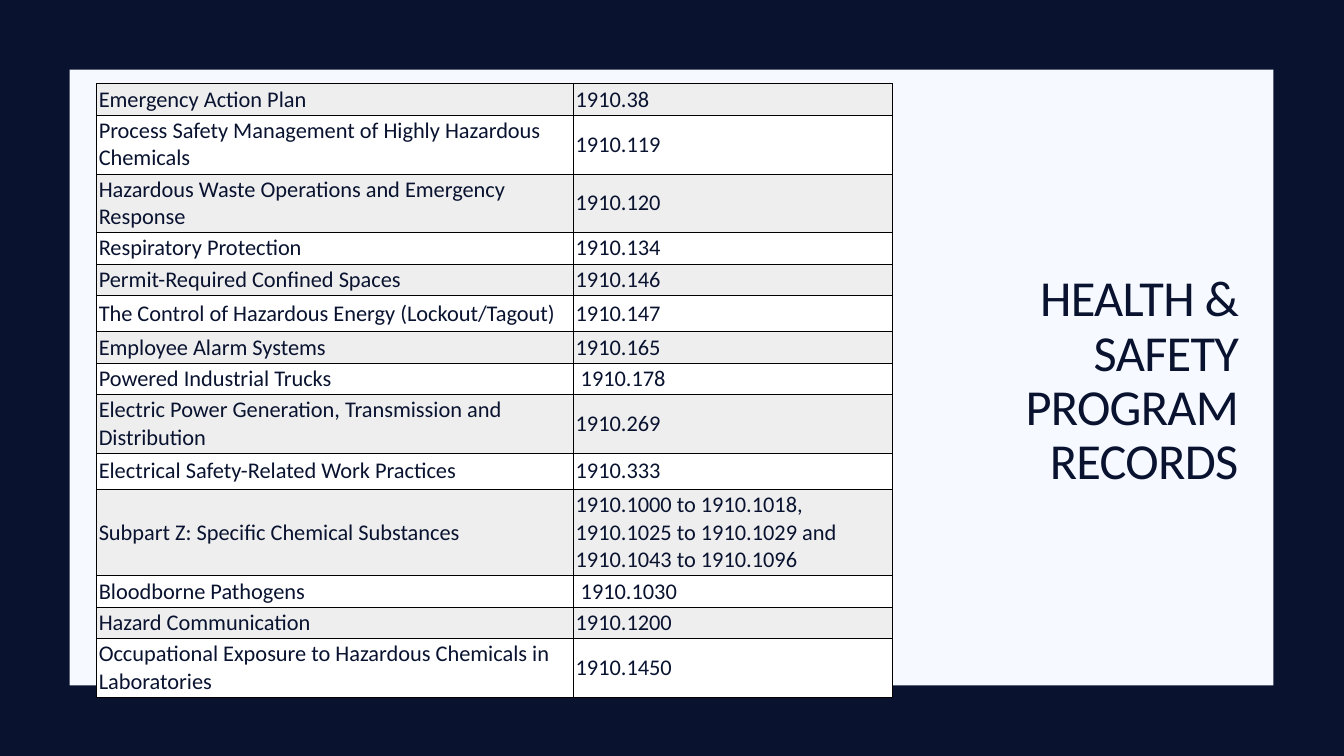
from dataclasses import dataclass

from lxml.etree import SubElement
from pptx import Presentation
from pptx.dml.color import RGBColor
from pptx.enum.shapes import MSO_SHAPE
from pptx.enum.text import MSO_ANCHOR, PP_ALIGN
from pptx.oxml.ns import qn
from pptx.util import Inches, Pt


@dataclass(frozen=True)
class Theme:
    font: str = "Calibri"
    navy: str = "091330"
    panel: str = "F6F9FF"
    bands: tuple = ("EEEEEE", "FFFFFF")
    border: str = "000000"
    border_pt: float = 0.5
    title_pt: int = 36
    table_pt: int = 16


THEME = Theme()

# Row heights by number of text lines, plus a roomier single line
ONE, ROOMY, TWO, THREE = 0.3, 0.36, 0.58, 0.85
COLUMN_WIDTHS = (4.73, 3.16)
RECORDS = [
    ("Emergency Action Plan", "1910.38", ONE),
    ("Process Safety Management of Highly Hazardous Chemicals", "1910.119", TWO),
    ("Hazardous Waste Operations and Emergency Response", "1910.120", TWO),
    ("Respiratory Protection", "1910.134", ONE),
    ("Permit-Required Confined Spaces", "1910.146", ONE),
    ("The Control of Hazardous Energy (Lockout/Tagout)", "1910.147", ROOMY),
    ("Employee Alarm Systems", "1910.165", ONE),
    ("Powered Industrial Trucks", " 1910.178", ONE),
    ("Electric Power Generation, Transmission and Distribution", "1910.269", TWO),
    ("Electrical Safety-Related Work Practices", "1910.333", ROOMY),
    ("Subpart Z: Specific Chemical Substances",
     "1910.1000 to 1910.1018, 1910.1025 to 1910.1029 and 1910.1043 to 1910.1096", THREE),
    ("Bloodborne Pathogens", " 1910.1030", ONE),
    ("Hazard Communication", "1910.1200", ONE),
    ("Occupational Exposure to Hazardous Chemicals in Laboratories", "1910.1450", TWO),
]


def add_run(p, text, size):
    r = p.add_run()
    r.text = text
    r.font.name = THEME.font
    r.font.size = Pt(size)
    r.font.color.rgb = RGBColor.from_string(THEME.navy)
    return r


def add_block(s, left, top, width, height, color):
    sp = s.shapes.add_shape(MSO_SHAPE.RECTANGLE, Inches(left), Inches(top),
                            Inches(width), Inches(height))
    sp.shadow.inherit = False
    sp.fill.solid()
    sp.fill.fore_color.rgb = RGBColor.from_string(color)
    sp.line.fill.background()


def set_borders(cell):
    # Borders must come before the fill in the cell properties
    tc_pr = cell._tc.get_or_add_tcPr()
    for side in ("a:lnL", "a:lnR", "a:lnT", "a:lnB"):
        ln = SubElement(tc_pr, qn(side), w=str(Pt(THEME.border_pt)))
        fill = SubElement(ln, qn("a:solidFill"))
        SubElement(fill, qn("a:srgbClr"), val=THEME.border)


def fill_cell(cell, text, band):
    set_borders(cell)
    cell.fill.solid()
    cell.fill.fore_color.rgb = RGBColor.from_string(band)
    cell.vertical_anchor = MSO_ANCHOR.MIDDLE
    cell.margin_left = cell.margin_right = Inches(0.02)
    cell.margin_top = cell.margin_bottom = Inches(0.02)
    add_run(cell.text_frame.paragraphs[0], text, THEME.table_pt)


def add_records_table(s, left, top):
    height = sum(row_height for *_, row_height in RECORDS)
    frame = s.shapes.add_table(len(RECORDS), len(COLUMN_WIDTHS), Inches(left), Inches(top),
                               Inches(sum(COLUMN_WIDTHS)), Inches(height))
    table = frame.table
    table.first_row = table.horz_banding = False
    for column, width in zip(table.columns, COLUMN_WIDTHS):
        column.width = Inches(width)
    for i, (*texts, row_height) in enumerate(RECORDS):
        table.rows[i].height = Inches(row_height)
        for j, text in enumerate(texts):
            fill_cell(table.cell(i, j), text, THEME.bands[i % 2])


def add_title(s, text, left, top, width, height):
    sp = s.shapes.add_textbox(Inches(left), Inches(top), Inches(width), Inches(height))
    tf = sp.text_frame
    tf.word_wrap = True
    tf.vertical_anchor = MSO_ANCHOR.MIDDLE
    tf.margin_left = Inches(0.3)
    p = tf.paragraphs[0]
    p.alignment = PP_ALIGN.RIGHT
    p.line_spacing = 0.9
    r = add_run(p, text, THEME.title_pt)
    r.font._element.set("spc", "-50")


def main():
    prs = Presentation()
    prs.slide_width, prs.slide_height = Inches(13.33), Inches(7.5)
    s = prs.slides.add_slide(prs.slide_layouts[6])

    # Dark frame and light panel
    add_block(s, 0, 0, 13.33, 7.5, THEME.navy)
    add_block(s, 0.69, 0.69, 11.94, 6.11, THEME.panel)

    # Programs and their standards
    add_records_table(s, 0.96, 0.83)

    # Title
    add_title(s, "HEALTH & SAFETY PROGRAM RECORDS", 8.71, 3.47, 3.67, 0.64)

    prs.save("out.pptx")


if __name__ == "__main__":
    main()
